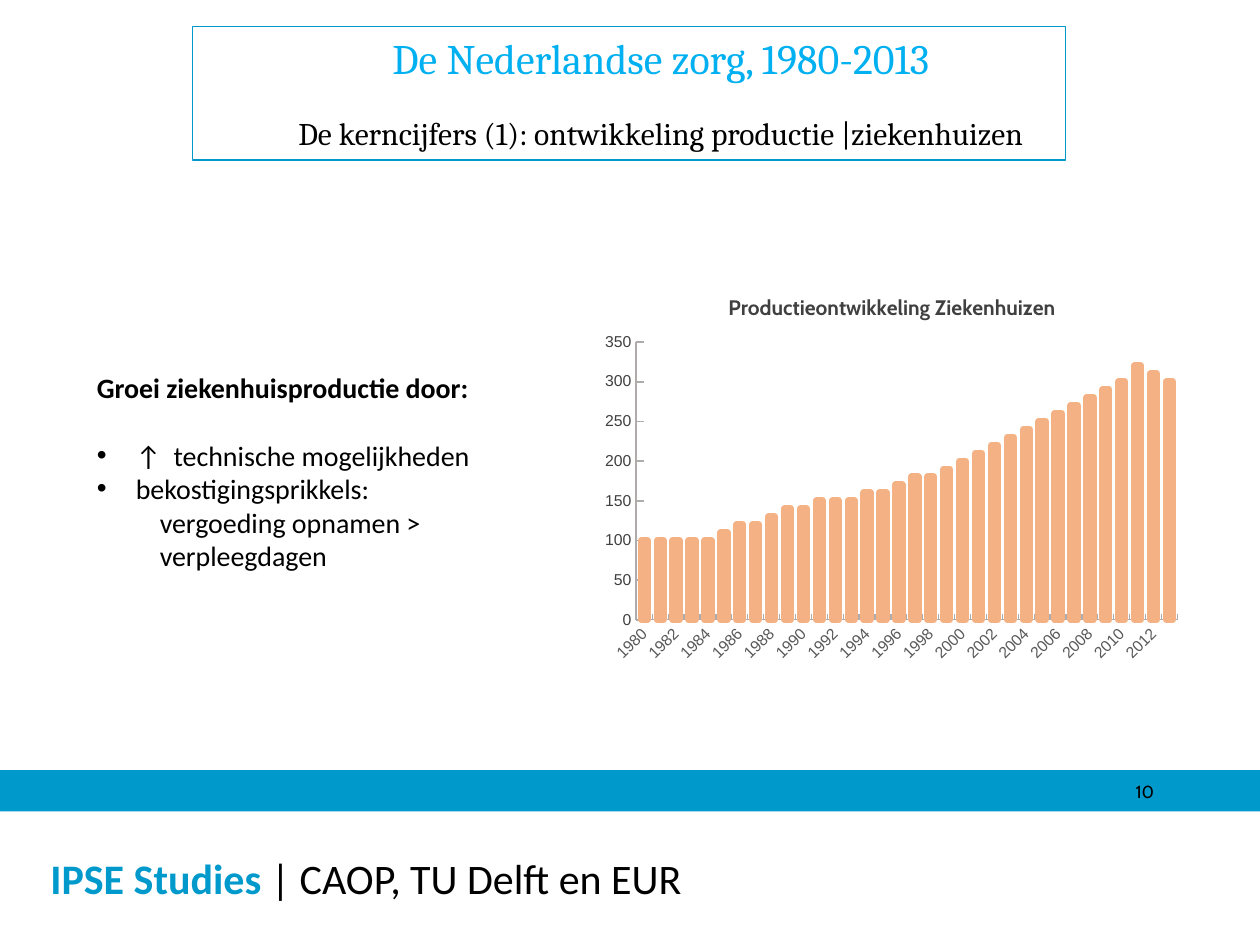
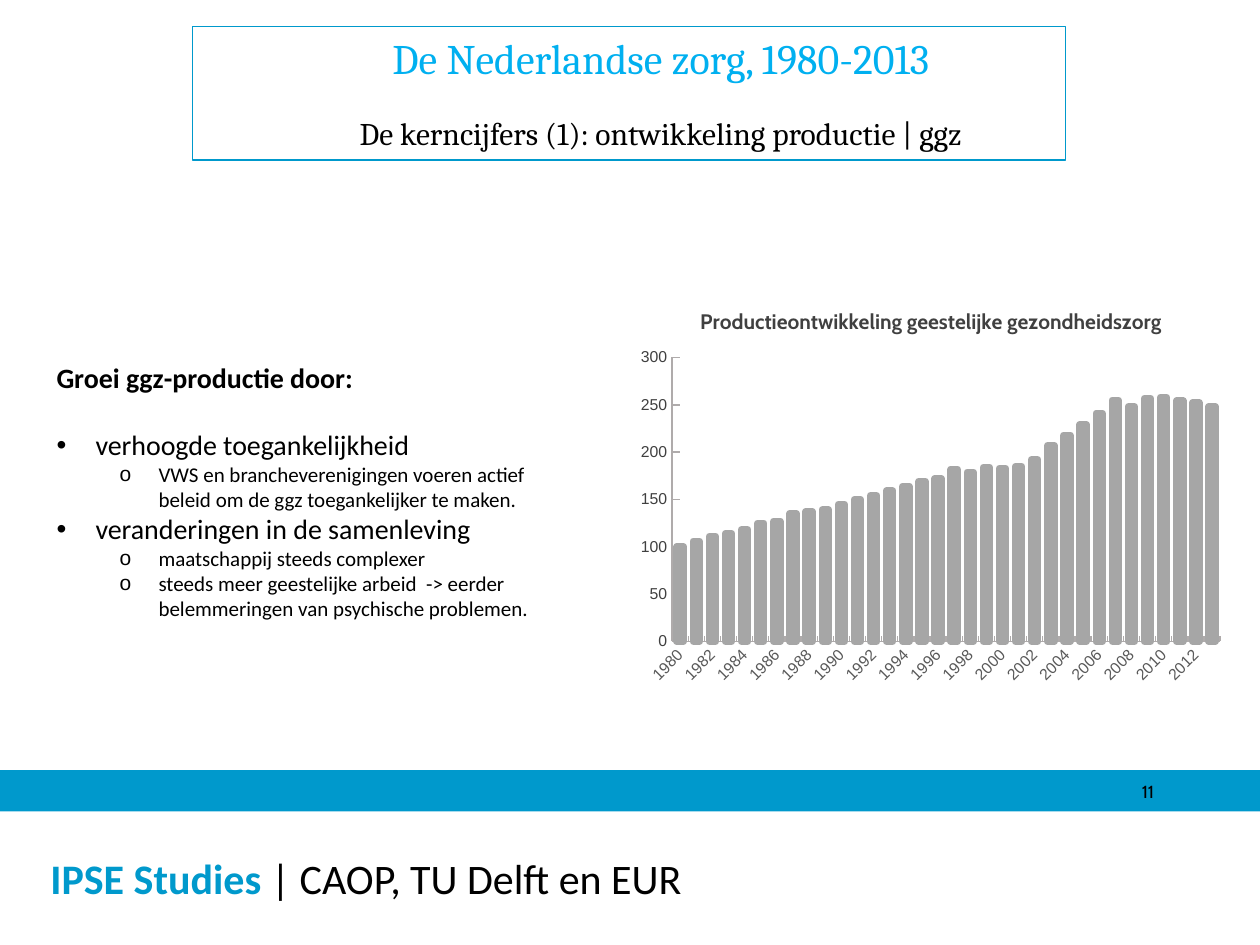
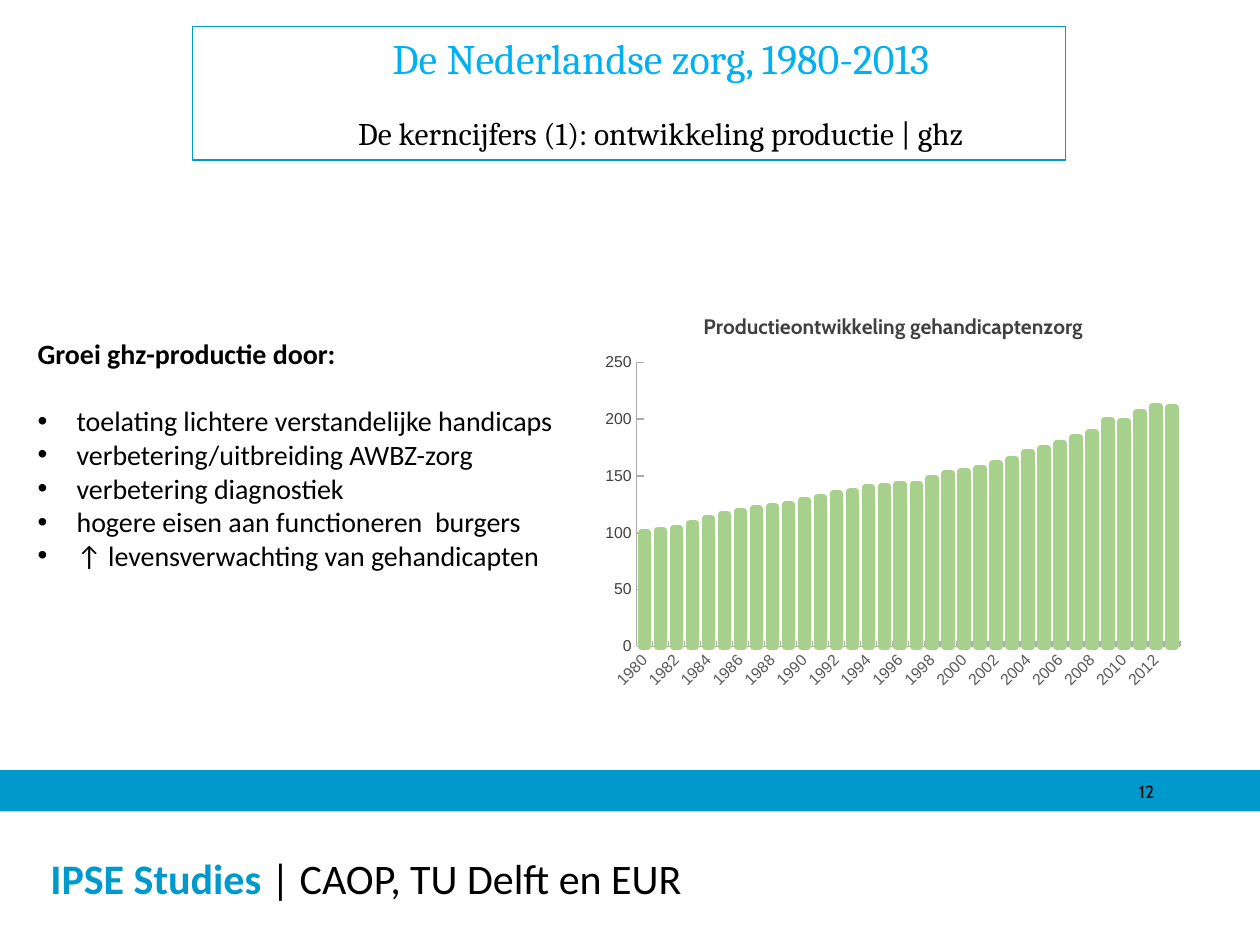
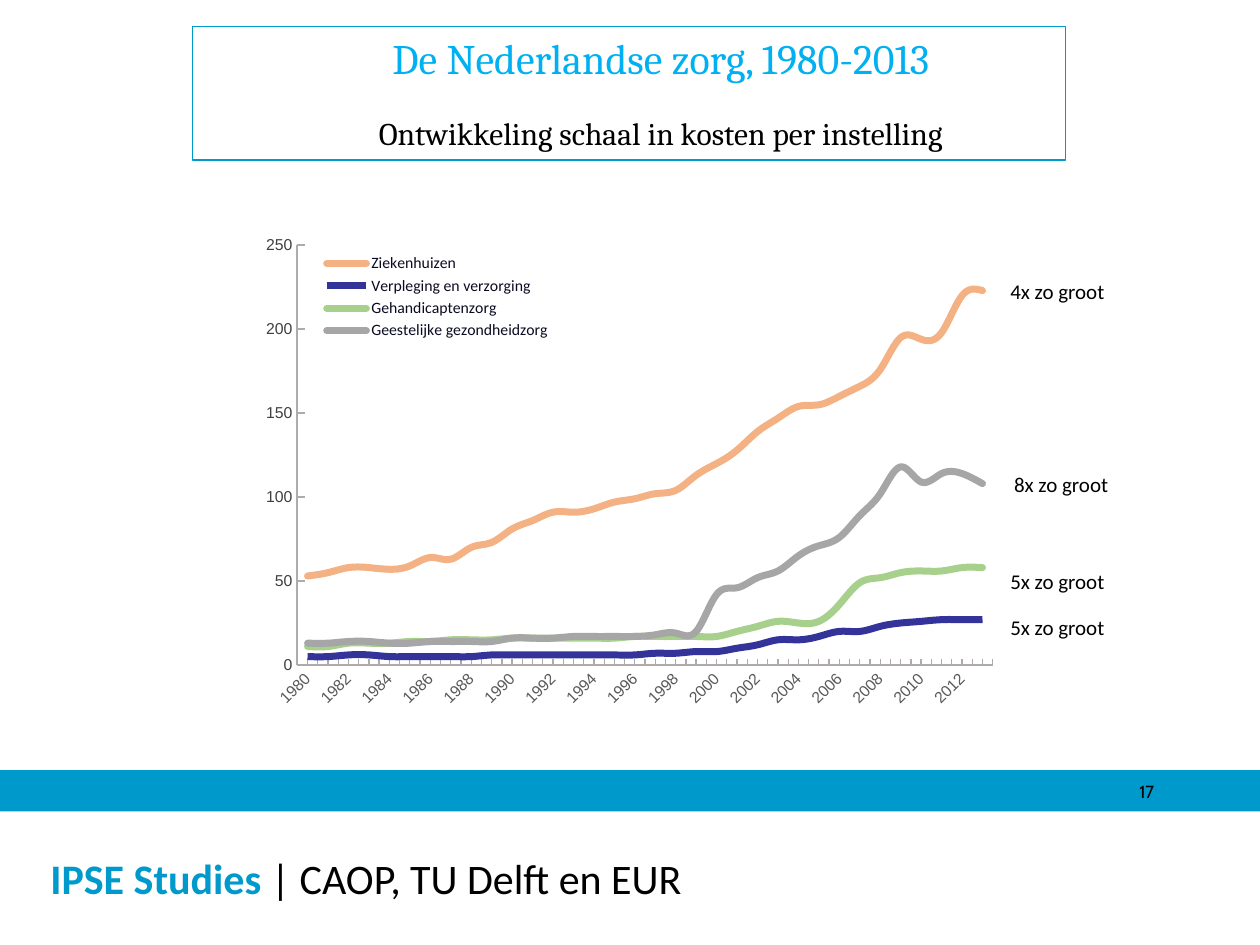
"""Build four slides on the growth of Dutch health care."""
import lxml.etree
import pptx
import pptx.chart.data
import pptx.dml.color
import pptx.enum.chart
import pptx.enum.shapes
import pptx.enum.text
import pptx.oxml
import pptx.oxml.ns
import pptx.util

RGB = pptx.dml.color.RGBColor
BLUE = RGB(0x00, 0x99, 0xCC)
SKY = RGB(0x00, 0xB0, 0xF0)
NAVY = RGB(0x33, 0x33, 0x99)
PEACH = RGB(0xF4, 0xB1, 0x83)
GREEN = RGB(0xA8, 0xD0, 0x8D)
GREY = RGB(0xA6, 0xA6, 0xA6)
AXIS = RGB(0xAF, 0xAB, 0xAB)
DARK = RGB(0x40, 0x40, 0x40)
MID = RGB(0x59, 0x59, 0x59)
INK = RGB(0x0B, 0x0B, 0x22)
PALE = RGB(0xBB, 0xE0, 0xE3)
BLACK = RGB(0, 0, 0)
WHITE = RGB(255, 255, 255)

Pt = pptx.util.Pt
qn = pptx.oxml.ns.qn
KIND = pptx.enum.chart.XL_CHART_TYPE
TICK = pptx.enum.chart.XL_TICK_MARK
ALIGN = pptx.enum.text.PP_ALIGN
FIT = pptx.enum.text.MSO_AUTO_SIZE
MID_ROW = pptx.enum.text.MSO_ANCHOR.MIDDLE

COLS, ROWS = 100, 75
YEARS = [str(year) for year in range(1980, 2014)]
TITLE = "De Nederlandse zorg, 1980-2013"
HEAD = dict(size=16, bold=True)
ITEM = dict(bullet="•", left=0.31, hang=-0.31, size=16)
SUB = dict(bullet="o", left=0.81, hang=-0.31, level=1, size=12)
BAR_PLOT = (0.07, 0.17, 0.91, 0.7)
LINE_PLOT = (0.06, 0.04, 0.92, 0.85)
KEY_SPOT = (0.09, 0.05, 0.31, 0.19)


def put(item, **fmt):
    """Set each format value on the item."""
    for name, value in fmt.items():
        setattr(item, name, value)


def ink(font, size, color=BLACK, name="Calibri", bold=False):
    """Style a font."""
    put(font, size=Pt(size), name=name, bold=bold)
    font.color.rgb = color


def stroke(line, color, width, cap=None):
    """Style a line."""
    line.color.rgb = color
    line.width = Pt(width)
    if cap:
        ln = line._get_or_add_ln()
        ln.set("cap", cap)
        lxml.etree.SubElement(ln, qn("a:round"))


def place(item, spot):
    """Fix a chart part at shares of the chart's size."""
    old = item.find(qn("c:layout"))
    if old is not None:
        item.remove(old)
    inner = '<c:layoutTarget val="inner"/>' if item.tag == qn("c:plotArea") else ""
    modes = "".join(f'<c:{side}Mode val="edge"/>' for side in "xy")
    sizes = "".join(f'<c:{side} val="{part}"/>' for side, part in zip("xywh", spot))
    layout = pptx.oxml.parse_xml(
        f'<c:layout {pptx.oxml.ns.nsdecls("c")}><c:manualLayout>'
        f"{inner}{modes}{sizes}</c:manualLayout></c:layout>")
    if inner:
        item.insert(0, layout)
    else:
        item.find(qn("c:legendPos")).addnext(layout)


class Deck:
    """Hold the shared style and the current slide."""

    def __init__(self):
        """Start a deck of 10 by 7.5 inches."""
        self.show = pptx.Presentation()
        put(self.show, slide_width=pptx.util.Inches(10),
            slide_height=pptx.util.Inches(7.5))
        self.col = self.show.slide_width / COLS
        self.row = self.show.slide_height / ROWS

    def cells(self, x, y, w, h):
        """Turn grid cells into lengths."""
        return [round(v * unit) for v, unit in
                zip((x, y, w, h), (self.col, self.row) * 2)]

    def page(self, number, topic):
        """Add a slide with bands, footer, number and title."""
        self.slide = self.show.slides.add_slide(self.show.slide_layouts[6])
        self.box((0, 63.6, 100, 3.1), BLUE, BLUE)
        foot = self.box((0, 64.4, 100, 10.6), WHITE)
        put(foot.text_frame, vertical_anchor=MID_ROW,
            margin_left=pptx.util.Inches(0.4))
        self.para(foot.text_frame, [("IPSE Studies ", BLUE, True),
                                    ("| CAOP, TU Delft en EUR", BLACK, False)], size=24)
        self.box((0, 61.2, 100, 2.4), BLUE, BLUE)
        self.text((70.8, 61.5, 20.8, 2.5),
                  [(str(number), dict(size=10, name="Cabin", align=ALIGN.RIGHT))], 0)
        head = self.box((15.3, 2.1, 69.3, 10.6), None, BLUE)
        style = dict(name="Cambria", align=ALIGN.CENTER, level=1, left=0.5, after=18)
        self.para(head.text_frame, TITLE, size=24, color=SKY, **style)
        self.para(head.text_frame, topic, size=18, **style)

    def box(self, spot, fill, line=None):
        """Add a flat rectangle."""
        shape = self.slide.shapes.add_shape(
            pptx.enum.shapes.MSO_SHAPE.RECTANGLE, *self.cells(*spot))
        shape.shadow.inherit = False
        if fill is None:
            shape.fill.background()
        else:
            shape.fill.solid()
            shape.fill.fore_color.rgb = fill
        if line is None:
            shape.line.fill.background()
        else:
            stroke(shape.line, line, 0.75)
        put(shape.text_frame, word_wrap=True,
            vertical_anchor=pptx.enum.text.MSO_ANCHOR.TOP)
        return shape

    def para(self, frame, text, size, color=BLACK, name="Calibri", bold=False,
             align=ALIGN.LEFT, level=0, left=0, hang=0, bullet=None,
             before=0, after=0):
        """Fill the first free paragraph of a frame."""
        para = frame.paragraphs[0]
        if para.runs:
            para = frame.add_paragraph()
        put(para, alignment=align, level=level, space_before=Pt(before),
            space_after=Pt(after))
        props = para._p.get_or_add_pPr()
        for key, inch in (("marL", left), ("indent", hang)):
            props.set(key, str(pptx.util.Inches(inch)))
        if bullet:
            lxml.etree.SubElement(props, qn("a:buFont"), typeface="Arial")
            lxml.etree.SubElement(props, qn("a:buChar"), char=bullet)
        parts = [(text, color, bold)] if isinstance(text, str) else text
        for words, tint, heavy in parts:
            run = para.add_run()
            run.text = words
            ink(run.font, size, tint, name, heavy)

    def text(self, spot, paras, side=0.1):
        """Add a text box with styled paragraphs."""
        frame = self.slide.shapes.add_textbox(*self.cells(*spot)).text_frame
        inset = pptx.util.Inches(side)
        put(frame, word_wrap=True, auto_size=FIT.SHAPE_TO_FIT_TEXT,
            margin_left=inset, margin_right=inset)
        for words, style in paras:
            self.para(frame, words, **style)

    def points(self, spot, head, items):
        """Add a bold heading over a list set one line lower."""
        (first, style), *rest = items
        self.text(spot, [(head, HEAD), (first, dict(style, before=19.5)), *rest])

    def chart(self, spot, kind, rows, top, plot):
        """Add a chart with the shared axes."""
        data = pptx.chart.data.CategoryChartData()
        data.categories = YEARS
        for name, values in rows:
            data.add_series(name, values)
        chart = self.slide.shapes.add_chart(kind, *self.cells(*spot), data).chart
        ink(chart.font, 10, name="Cabin")
        put(chart, has_title=False, has_legend=False)
        chart._chartSpace.chart.addnext(pptx.oxml.parse_xml(
            f'<c:spPr {pptx.oxml.ns.nsdecls("c", "a")}><a:solidFill>'
            f'<a:srgbClr val="{WHITE}"/></a:solidFill>'
            "<a:ln><a:noFill/></a:ln></c:spPr>"))
        years, scale = chart.category_axis, chart.value_axis
        put(years, major_tick_mark=TICK.NONE, minor_tick_mark=TICK.INSIDE)
        put(scale, major_tick_mark=TICK.INSIDE, minor_tick_mark=TICK.NONE,
            minimum_scale=0, maximum_scale=top, major_unit=50)
        for axis, tint, width in ((years, MID, 0.75), (scale, DARK, 1)):
            axis.has_major_gridlines = False
            ink(axis.tick_labels.font, 9, tint, "Arial")
            stroke(axis.format.line, AXIS, width)
        years._element.find(qn("c:txPr")).find(qn("a:bodyPr")).set("rot", "-2700000")
        skip = lxml.etree.Element(qn("c:tickLblSkip"), val="2")
        years._element.find(qn("c:noMultiLvlLbl")).addprevious(skip)
        place(chart._chartSpace.chart.plotArea, plot)
        return chart

    def bars(self, spot, title, values, fill, line, top):
        """Add a titled column chart with thick rounded outlines."""
        chart = self.chart(spot, KIND.COLUMN_CLUSTERED, [("Series 1", values)],
                           top, BAR_PLOT)
        chart.has_title = True
        frame = chart.chart_title.text_frame
        frame.text = title
        ink(frame.paragraphs[0].runs[0].font, 12, DARK, "Cabin", True)
        put(chart.plots[0], gap_width=150, vary_by_categories=False)
        form = chart.plots[0].series[0].format
        form.fill.solid()
        form.fill.fore_color.rgb = fill
        stroke(form.line, line, 4, "rnd")

    def lines(self, spot, rows, top):
        """Add a smooth line chart with a legend inside the plot."""
        chart = self.chart(spot, KIND.LINE, [row[:2] for row in rows], top, LINE_PLOT)
        chart.plots[0].vary_by_categories = False
        for series, (_, _, color, cap) in zip(chart.plots[0].series, rows):
            series.smooth = True
            stroke(series.format.line, color, 4, cap)
        chart.has_legend = True
        put(chart.legend, include_in_layout=False,
            position=pptx.enum.chart.XL_LEGEND_POSITION.RIGHT)
        chart.legend._element.find(qn("c:overlay")).set("val", "1")
        ink(chart.legend.font, 9, INK)
        place(chart.legend._element, KEY_SPOT)


def main():
    """Build and save the deck."""
    deck = Deck()

    deck.page(10, "De kerncijfers (1): ontwikkeling productie |ziekenhuizen")
    deck.bars((47.2, 21.8, 47.2, 31.5), "Productieontwikkeling Ziekenhuizen",
              [100, 100, 100, 100, 100, 110, 120, 120, 130, 140, 140, 150,
               150, 150, 160, 160, 170, 180, 180, 190, 200, 210, 220, 230,
               240, 250, 260, 270, 280, 290, 300, 320, 310, 300],
              PALE, PEACH, 350)
    deck.points((6.7, 28.9, 34.6, 17.2), "Groei ziekenhuisproductie door:", [
        ("↑  technische mogelijkheden", ITEM),
        ("bekostigingsprikkels:", ITEM),
        ("vergoeding opnamen > verpleegdagen", dict(size=16, level=1, left=0.5))])

    deck.page(11, "De kerncijfers (1): ontwikkeling productie | ggz")
    deck.bars((50, 22.9, 47.8, 32.2),
              "Productieontwikkeling geestelijke gezondheidszorg",
              [100, 106, 111, 114, 118, 125, 127, 135, 137, 139, 145, 150,
               154, 159, 164, 169, 172, 182, 179, 184, 183, 185, 192, 207,
               218, 229, 241, 255, 248, 257, 258, 254, 252, 248],
              BLACK, GREY, 300)
    deck.points((3.5, 28.1, 42.9, 21.9), "Groei ggz-productie door:", [
        ("verhoogde toegankelijkheid", ITEM),
        ("VWS en brancheverenigingen voeren actief beleid om de ggz "
         "toegankelijker te maken.", SUB),
        ("veranderingen in de samenleving", ITEM),
        ("maatschappij steeds complexer", SUB),
        ("steeds meer geestelijke arbeid  -> eerder belemmeringen van "
         "psychische problemen.", SUB)])

    deck.page(12, "De kerncijfers (1): ontwikkeling productie | ghz")
    deck.bars((47.2, 23.3, 47.4, 32.2), "Productieontwikkeling gehandicaptenzorg",
              [100, 102, 104, 108, 113, 116, 119, 121, 123, 125, 128, 131,
               135, 136, 140, 141, 143, 143, 148, 152, 154, 157, 161, 165,
               171, 174, 179, 184, 188, 199, 198, 206, 211, 210],
              WHITE, GREEN, 250)
    deck.points((2, 26.2, 44.1, 22.6), "Groei ghz-productie door:", [
        (words, ITEM) for words in (
            "toelating lichtere verstandelijke handicaps",
            "verbetering/uitbreiding AWBZ-zorg",
            "verbetering diagnostiek",
            "hogere eisen aan functioneren  burgers",
            "↑ levensverwachting van gehandicapten")])

    deck.page(17, "Ontwikkeling schaal in kosten per instelling")
    deck.lines((20, 17.9, 60, 39.2), [
        ("Ziekenhuizen",
         [53, 55, 58, 58, 57, 59, 64, 63, 70, 73, 81, 86, 91, 91, 93, 97, 99,
          102, 104, 113, 120, 128, 139, 147, 154, 155, 160, 166, 176, 195,
          194, 198, 220, 223], PEACH, "rnd"),
        ("Verpleging en verzorging",
         [5, 5, 6, 6, 5, 5, 5, 5, 5, 6, 6, 6, 6, 6, 6, 6, 6, 7, 7, 8, 8, 10,
          12, 15, 15, 17, 20, 20, 23, 25, 26, 27, 27, 27], NAVY, None),
        ("Gehandicaptenzorg",
         [11, 11, 13, 13, 13, 14, 14, 15, 15, 15, 16, 16, 16, 16, 16, 16, 17,
          17, 17, 17, 17, 20, 23, 26, 25, 26, 36, 49, 52, 55, 56, 56, 58, 58],
         GREEN, "rnd"),
        ("Geestelijke gezondheidzorg",
         [13, 13, 14, 14, 13, 13, 14, 14, 14, 14, 16, 16, 16, 17, 17, 17, 17,
          18, 19, 20, 42, 46, 52, 56, 65, 71, 76, 89, 102, 118, 109, 114, 114,
          108], GREY, "rnd")], 250)
    for x, y, times in ((79.2, 21.6, 4), (79.5, 36.9, 8),
                        (79.2, 48.3, 5), (79.2, 44.6, 5)):
        deck.text((x, y, 11.7, 3), [(f"{times}x zo groot", dict(size=12))])

    deck.show.save("out.pptx")


if __name__ == "__main__":
    main()
